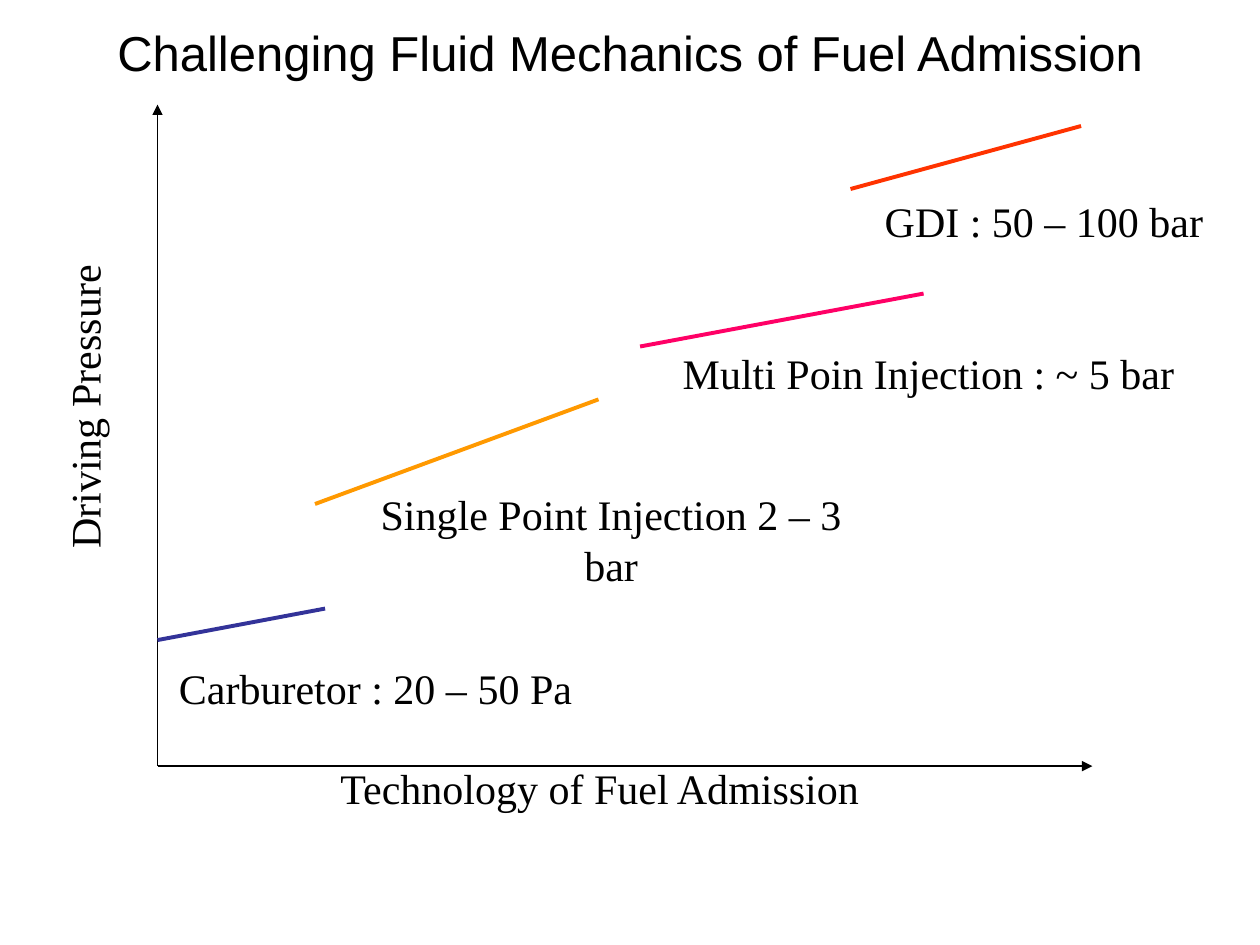
from dataclasses import dataclass

from lxml.etree import SubElement
from pptx import Presentation
from pptx.dml.color import RGBColor
from pptx.enum.shapes import MSO_CONNECTOR
from pptx.enum.text import MSO_ANCHOR, MSO_AUTO_SIZE, PP_ALIGN
from pptx.oxml.ns import qn
from pptx.shapes.connector import Connector
from pptx.shapes.shapetree import GroupShapes, SlideShapes
from pptx.text.text import TextFrame
from pptx.util import Inches, Pt


@dataclass(frozen=True)
class Theme:
    ink: str = "000000"
    title_font: str = "Arial"
    label_font: str = "Times New Roman"
    title_size: float = 28
    label_size: float = 24
    axis_width: float = 0.75
    range_width: float = 2.25


@dataclass(frozen=True)
class Label:
    text: str
    left: float
    top: float
    width: float
    rotation: float = 0


@dataclass(frozen=True)
class Segment:
    start: tuple[float, float]
    end: tuple[float, float]
    color: str
    width: float


@dataclass(frozen=True)
class PressureRange:
    segment: Segment
    label: Label


THEME = Theme()
LABEL_HEIGHT = 0.5
ORIGIN = (1.25, 6.08)
AXES = [
    Segment(ORIGIN, (8.67, ORIGIN[1]), THEME.ink, THEME.axis_width),
    Segment(ORIGIN, (ORIGIN[0], 0.83), THEME.ink, THEME.axis_width),
]
AXIS_LABELS = [
    Label("Driving Pressure", -0.56, 2.98, 2.45, 270),
    Label("Technology of Fuel Admission", 2.58, 6, 4.36),
]
RANGES = [
    PressureRange(
        Segment((1.25, 5.08), (2.58, 4.83), "333399", THEME.range_width),
        Label("Carburetor : 20 – 50 Pa", 1.32, 5.21, 3.32),
    ),
    PressureRange(
        Segment((2.5, 4), (4.75, 3.17), "FF9900", THEME.range_width),
        Label("Single Point Injection 2 – 3 bar", 2.67, 3.83, 4.36),
    ),
    PressureRange(
        Segment((5.08, 2.75), (7.33, 2.33), "FF0066", THEME.range_width),
        Label("Multi Poin Injection : ~ 5 bar", 5.32, 2.71, 4.1),
    ),
    PressureRange(
        Segment((6.75, 1.5), (8.58, 1), "FF3300", THEME.range_width),
        Label("GDI : 50 – 100 bar", 6.92, 1.5, 2.73),
    ),
]


def write_text(frame: TextFrame, text: str, font: str, size: float) -> None:
    frame.text = text
    para = frame.paragraphs[0]
    para.alignment = PP_ALIGN.CENTER
    para.font.name = font
    para.font.size = Pt(size)
    para.font.color.rgb = RGBColor.from_string(THEME.ink)


def draw_segment(shapes: SlideShapes | GroupShapes, segment: Segment) -> Connector:
    points = [Inches(value) for value in segment.start + segment.end]
    connector = shapes.add_connector(MSO_CONNECTOR.STRAIGHT, *points)
    connector.line.color.rgb = RGBColor.from_string(segment.color)
    connector.line.width = Pt(segment.width)
    SubElement(connector._element.spPr, qn("a:effectLst"))
    return connector


def draw_axis(shapes: SlideShapes, axis: Segment) -> None:
    connector = draw_segment(shapes, axis)
    SubElement(connector.line._get_or_add_ln(), qn("a:tailEnd"), type="triangle")


def draw_label(shapes: SlideShapes | GroupShapes, label: Label) -> None:
    box = shapes.add_textbox(
        Inches(label.left), Inches(label.top), Inches(label.width), Inches(LABEL_HEIGHT)
    )
    box.rotation = label.rotation
    frame = box.text_frame
    frame.word_wrap = False
    frame.auto_size = MSO_AUTO_SIZE.SHAPE_TO_FIT_TEXT
    write_text(frame, label.text, THEME.label_font, THEME.label_size)


def draw_range(shapes: SlideShapes, pressure_range: PressureRange) -> None:
    group = shapes.add_group_shape()
    draw_segment(group.shapes, pressure_range.segment)
    draw_label(group.shapes, pressure_range.label)


def draw_title(shapes: SlideShapes, text: str) -> None:
    title = shapes.title
    title.left, title.top = Inches(0.75), Inches(0.08)
    title.width, title.height = Inches(8.5), Inches(0.67)
    frame = title.text_frame
    frame.word_wrap = True
    frame.auto_size = MSO_AUTO_SIZE.NONE
    frame.vertical_anchor = MSO_ANCHOR.MIDDLE
    write_text(frame, text, THEME.title_font, THEME.title_size)


def main() -> None:
    deck = Presentation()
    deck.slide_width, deck.slide_height = Inches(10), Inches(7.5)
    page = deck.slides.add_slide(deck.slide_layouts[5])
    draw_title(page.shapes, "Challenging Fluid Mechanics of Fuel Admission")
    for axis in AXES:
        draw_axis(page.shapes, axis)
    for label in AXIS_LABELS:
        draw_label(page.shapes, label)
    for pressure_range in RANGES:
        draw_range(page.shapes, pressure_range)
    deck.save("out.pptx")


if __name__ == "__main__":
    main()
